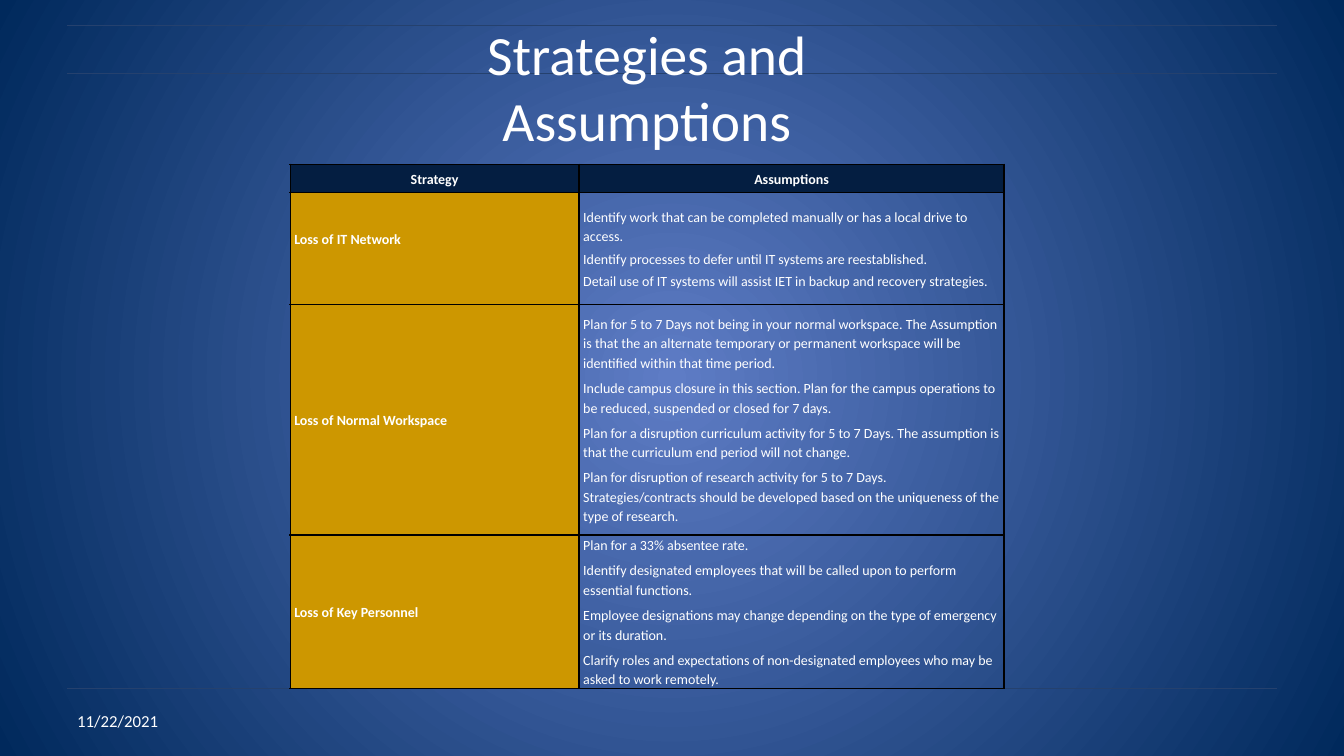
import pptx
import pptx.dml.color
import pptx.enum.shapes
import pptx.enum.text
import pptx.oxml
import pptx.oxml.ns
import pptx.util
from lxml import etree

Pt = pptx.util.Pt
RGBColor = pptx.dml.color.RGBColor
ALIGN = pptx.enum.text.PP_ALIGN
MIDDLE = pptx.enum.text.MSO_ANCHOR.MIDDLE
qn = pptx.oxml.ns.qn

GLOW = RGBColor(0x5E, 0x7C, 0xC5)
DEEP_BLUE = RGBColor(0x00, 0x29, 0x5C)
RULE_BLUE = RGBColor(0x25, 0x41, 0x6E)
HEADER_NAVY = RGBColor(0x04, 0x1E, 0x41)
GOLD = RGBColor(0xCD, 0x97, 0x00)
WHITE = RGBColor(0xFF, 0xFF, 0xFF)
BLACK = RGBColor(0x00, 0x00, 0x00)

COLUMN_WIDTHS = (206.4, 303.6)
ROW_HEIGHTS = (20.2, 79.9, 164.9, 109.4)
STRATEGIES = [
    ("Loss of IT Network", [
        "Identify work that can be completed manually or has a local drive to access.",
        "Identify processes to defer until IT systems are reestablished.",
        "Detail use of IT systems will assist IET in backup and recovery strategies.",
    ], 0, 14),
    ("Loss of Normal Workspace", [
        "Plan for 5 to 7 Days not being in your normal workspace. The Assumption is that "
        "the an alternate temporary or permanent workspace will be identified within that "
        "time period.",
        "Include campus closure in this section. Plan for the campus operations to be "
        "reduced, suspended or closed for 7 days.",
        "Plan for a disruption curriculum activity for 5 to 7 Days. The assumption is that "
        "the curriculum end period will not change.",
        "Plan for disruption of research activity for 5 to 7 Days. Strategies/contracts "
        "should be developed based on the uniqueness of the type of research.",
    ], 2, 0),
    ("Loss of Key Personnel", [
        "Plan for a 33% absentee rate.",
        "Identify designated employees that will be called upon to perform essential functions.",
        "Employee designations may change depending on the type of emergency or its duration.",
        "Clarify roles and expectations of non-designated employees who may be asked to "
        "work remotely.",
    ], 2, 0),
]


def paint_background(slide):
    fill = slide.background.fill
    fill.gradient()
    for stop, color, position in zip(fill.gradient_stops, (GLOW, DEEP_BLUE), (0, 1)):
        stop.color.rgb = color
        stop.position = position
    gradient = slide.element.find(".//" + qn("a:gradFill"))
    linear = gradient.find(qn("a:lin"))
    radial = etree.Element(qn("a:path"), {"path": "circle"})
    etree.SubElement(radial, qn("a:fillToRect"), dict.fromkeys("ltrb", "50000"))
    gradient.replace(linear, radial)


def add_rule(slide, y):
    rule = slide.shapes.add_connector(
        pptx.enum.shapes.MSO_CONNECTOR.STRAIGHT, Pt(48), Pt(y), Pt(912), Pt(y))
    rule.line.color.rgb = RULE_BLUE
    rule.line.width = Pt(0.75)
    etree.SubElement(rule.element.spPr, qn("a:effectLst"))


def write_run(paragraph, text, size, bold=False):
    run = paragraph.add_run()
    run.text = text
    run.font.name = "Calibri"
    run.font.size = Pt(size)
    run.font.bold = bold
    run.font.color.rgb = WHITE


def add_label(slide, text, box, size, align):
    frame = slide.shapes.add_textbox(*(Pt(length) for length in box)).text_frame
    frame.word_wrap = True
    frame.vertical_anchor = MIDDLE
    frame.paragraphs[0].alignment = align
    write_run(frame.paragraphs[0], text, size)


def border_cell(cell):
    properties = cell._tc.get_or_add_tcPr()
    for index, side in enumerate(("lnL", "lnR", "lnT", "lnB")):
        border = etree.Element(qn("a:" + side), {"w": str(Pt(1))})
        solid = etree.SubElement(border, qn("a:solidFill"))
        etree.SubElement(solid, qn("a:srgbClr"), {"val": str(BLACK)})
        properties.insert(index, border)


def fill_cell(cell, texts, color=None, bold=False, align=ALIGN.LEFT, after=2, bottom=0):
    cell.vertical_anchor = MIDDLE
    cell.margin_left = cell.margin_right = Pt(3)
    cell.margin_top, cell.margin_bottom = Pt(0), Pt(bottom)
    if color is None:
        cell.fill.background()
    else:
        cell.fill.solid()
        cell.fill.fore_color.rgb = color
    border_cell(cell)
    frame = cell.text_frame
    for index, text in enumerate(texts):
        paragraph = frame.add_paragraph() if index else frame.paragraphs[0]
        paragraph.alignment = align
        paragraph.line_spacing = 1.15
        paragraph.space_before = Pt(2 if index else 0)
        paragraph.space_after = Pt(after)
        write_run(paragraph, text, 10, bold)


def add_strategy_table(slide):
    table = slide.shapes.add_table(
        len(ROW_HEIGHTS), len(COLUMN_WIDTHS), Pt(207.2), Pt(117.2),
        Pt(sum(COLUMN_WIDTHS)), Pt(sum(ROW_HEIGHTS))).table
    for column, width in zip(table.columns, COLUMN_WIDTHS):
        column.width = Pt(width)
    for row, height in zip(table.rows, ROW_HEIGHTS):
        row.height = Pt(height)
    for index, heading in enumerate(("Strategy", "Assumptions")):
        fill_cell(table.cell(0, index), [heading], HEADER_NAVY, True, ALIGN.CENTER)
    for row, (strategy, assumptions, after, bottom) in enumerate(STRATEGIES, 1):
        fill_cell(table.cell(row, 0), [strategy], GOLD, True, bottom=bottom)
        fill_cell(table.cell(row, 1), assumptions, after=after)


def main():
    deck = pptx.Presentation()
    deck.slide_width, deck.slide_height = Pt(960), Pt(540)
    slide = deck.slides.add_slide(deck.slide_layouts[6])
    paint_background(slide)
    for y in (492, 18, 52.6):
        add_rule(slide, y)
    add_label(slide, "11/22/2021", (48, 500.5, 235.5, 28.8), 12, ALIGN.LEFT)
    add_label(slide, "Strategies and Assumptions", (240, 16.6, 444, 90), 39.6, ALIGN.CENTER)
    add_strategy_table(slide)
    deck.save("out.pptx")


if __name__ == "__main__":
    main()
